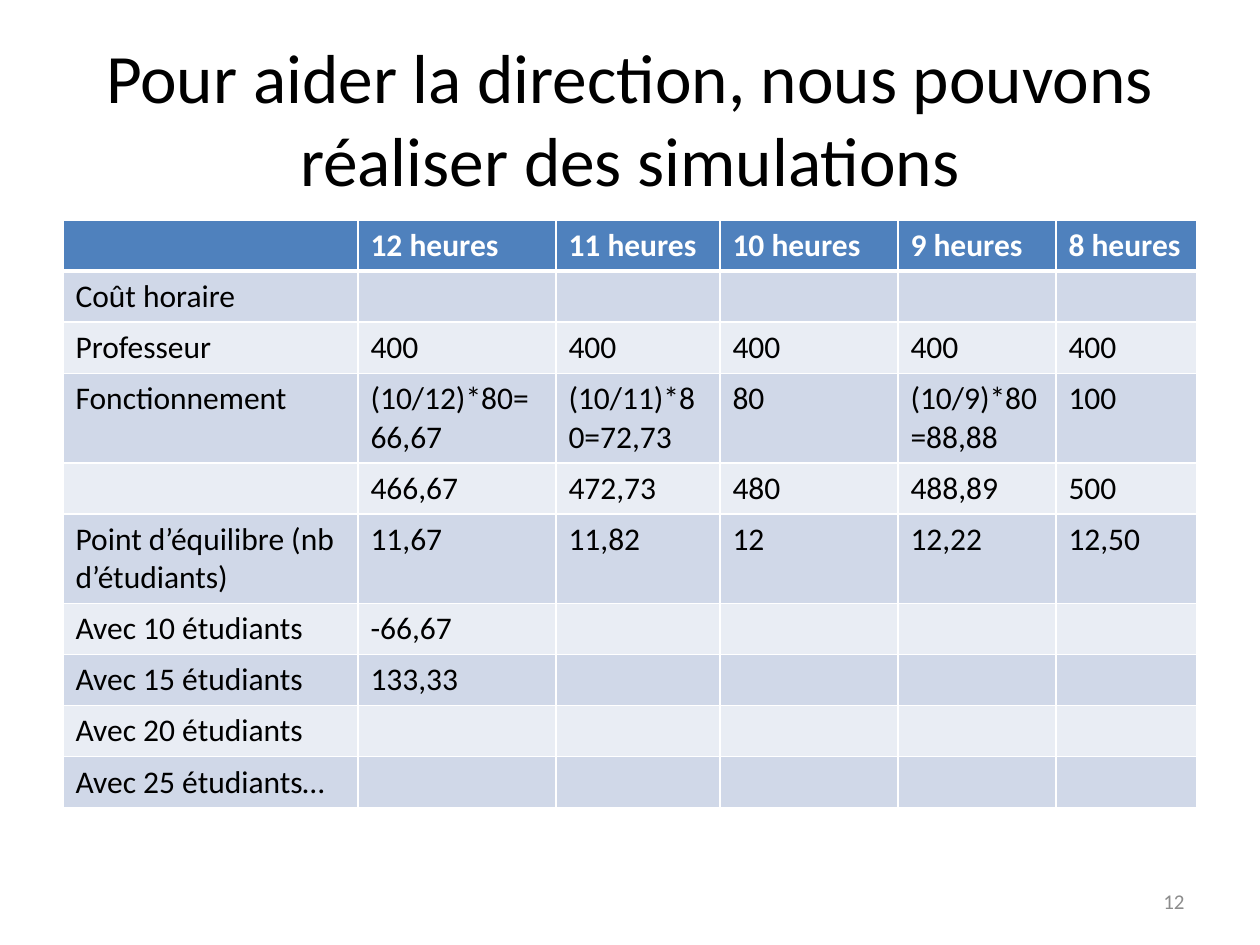
from pptx import Presentation
from pptx import util as u
from pptx.dml.color import RGBColor
from pptx.enum import text
from pptx.oxml.ns import qn
from lxml import etree

FONT = "Calibri"
BLACK = RGBColor(0x00, 0x00, 0x00)
WHITE = RGBColor(0xFF, 0xFF, 0xFF)
GREY = RGBColor(0x8C, 0x8C, 0x8C)
BLUE = RGBColor(0x4F, 0x81, 0xBD)
BANDS = [RGBColor(0xE9, 0xED, 0xF4), RGBColor(0xD0, 0xD8, 0xE8)]

COLS = [295, 198, 164, 178, 158, 141]
ROW = 51
ROWS = [
    ["", "12 heures", "11 heures", "10 heures", "9 heures", "8 heures"],
    ["Coût horaire"],
    ["Professeur"] + ["400"] * 5,
    ["Fonctionnement", "(10/12)*80=66,67", "(10/11)*80=72,73", "80",
     "(10/9)*80\n=88,88", "100"],
    ["", "466,67", "472,73", "480", "488,89", "500"],
    ["Point d’équilibre (nb d’étudiants)", "11,67", "11,82", "12", "12,22", "12,50"],
    ["Avec 10 étudiants", "-66,67"],
    ["Avec 15 étudiants", "133,33"],
    ["Avec 20 étudiants"],
    ["Avec 25 étudiants…"],
]


def px(n):
    return u.Emu(round(n * 914400 / 126))


def write(frame, words, size, color, bold=False, align=None):
    for i, line in enumerate(words.split("\n")):
        para = frame.paragraphs[0] if i == 0 else frame.add_paragraph()
        para.alignment = align
        run = para.add_run()
        run.text = line
        font = run.font
        font.name, font.size, font.bold = FONT, u.Pt(size), bold
        font.color.rgb = color


def edge(cell, side, width):
    props = cell._tc.get_or_add_tcPr()
    line = etree.SubElement(props, qn("a:ln" + side), w=str(u.Pt(width)))
    fill = etree.SubElement(line, qn("a:solidFill"))
    etree.SubElement(fill, qn("a:srgbClr"), val=str(WHITE))


def title(slide, x, y, w, h):
    head = slide.shapes.title
    head.left, head.top, head.width, head.height = map(px, (x, y, w, h))
    frame = head.text_frame
    frame.word_wrap = True
    frame.auto_size = text.MSO_AUTO_SIZE.NONE
    frame.vertical_anchor = text.MSO_ANCHOR.MIDDLE
    write(frame, "Pour aider la direction, nous pouvons réaliser des simulations",
          39.6, BLACK, align=text.PP_ALIGN.CENTER)


def grid(slide, x, y, w, h):
    shape = slide.shapes.add_table(len(ROWS), len(COLS), *map(px, (x, y, w, h)))
    table = shape.table
    for col, wide in zip(table.columns, COLS):
        col.width = px(wide)
    for r, words in enumerate(ROWS):
        table.rows[r].height = px(ROW)
        for c in range(len(COLS)):
            cell = table.cell(r, c)
            for side in "LRTB":
                thick = (r, side) in ((0, "B"), (1, "T"))
                edge(cell, side, 3 if thick else 1)
            cell.fill.solid()
            cell.fill.fore_color.rgb = BANDS[r % 2] if r else BLUE
            if c < len(words) and words[c]:
                write(cell.text_frame, words[c], 18, BLACK if r else WHITE, r == 0)
    shape.height = px(h)


def number(slide, x, y, w, h):
    frame = slide.shapes.add_textbox(*map(px, (x, y, w, h))).text_frame
    frame.word_wrap = True
    frame.vertical_anchor = text.MSO_ANCHOR.MIDDLE
    write(frame, "12", 12, GREY, align=text.PP_ALIGN.RIGHT)


def main():
    deck = Presentation()
    deck.slide_width, deck.slide_height = px(1260), px(945)
    slide = deck.slides.add_slide(deck.slide_layouts[5])
    title(slide, 63, 38, 1134, 158)
    grid(slide, 63, 220, 1134, 585)
    number(slide, 903, 876, 294, 50)
    deck.save("out.pptx")


if __name__ == "__main__":
    main()
